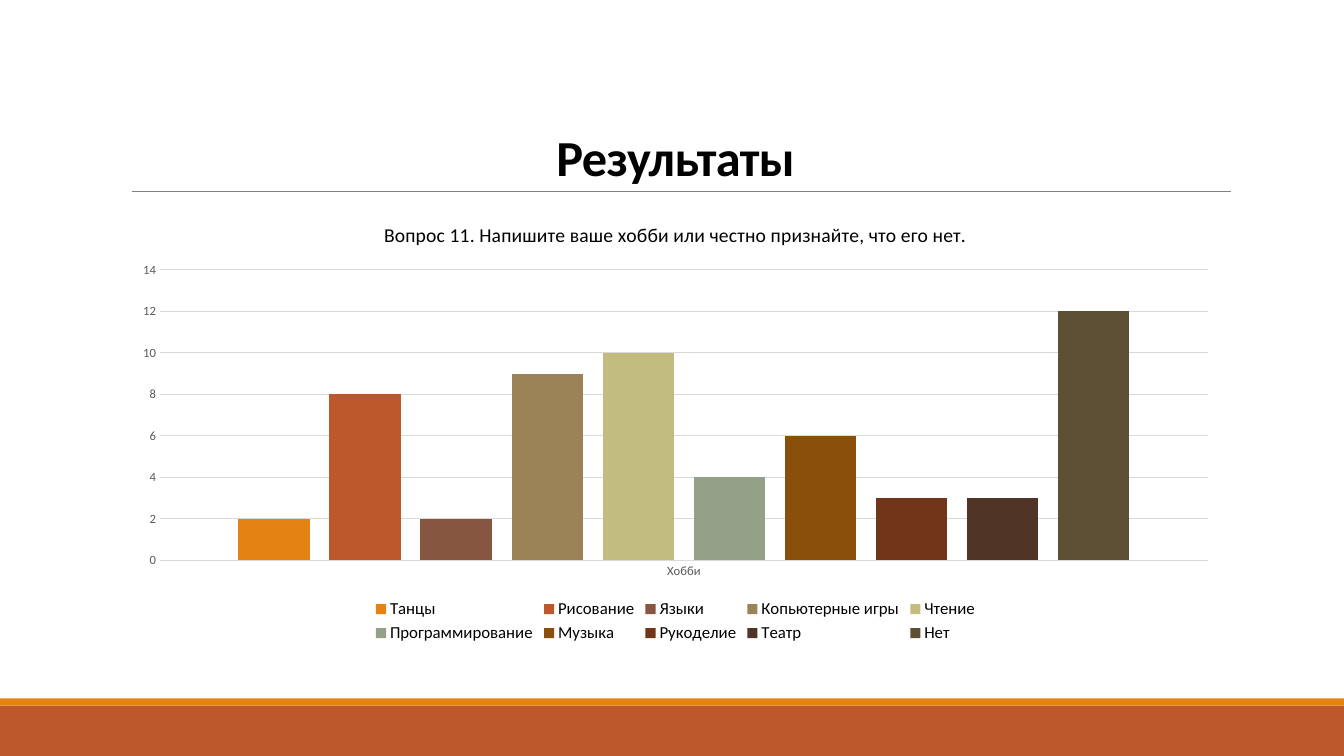
from dataclasses import dataclass

from lxml import etree
from pptx import Presentation
from pptx import util as u
from pptx.chart import data as cd
from pptx.dml.color import RGBColor
from pptx.enum import chart as ch, shapes, text
from pptx.oxml.ns import qn


@dataclass(frozen=True)
class Theme:
    font: str = "Calibri"
    ink: str = "000000"
    soft: str = "595959"
    grid: str = "D9D9D9"
    rule: str = "808080"
    band: str = "BD582C"
    strip: str = "E48312"
    head: float = 36
    ask: float = 14
    key: float = 12
    base: float = 10
    tick: float = 9


T = Theme()
WIDE, HIGH = 13.33, 7.5

HOBBIES = [
    ("Танцы", 2, "E48312"),
    ("Рисование", 8, "BD582C"),
    ("Языки", 2, "865640"),
    ("Копьютерные игры", 9, "9B8357"),
    ("Чтение", 10, "C2BC80"),
    ("Программирование", 4, "94A088"),
    ("Музыка", 6, "894F0B"),
    ("Рукоделие", 3, "71351A"),
    ("Театр", 3, "503426"),
    ("Нет", 12, "5D4F34"),
]


def inch(*nums):
    return [u.Inches(n) for n in nums]


def style(font, size, color, bold=False):
    font.name, font.size, font.bold = T.font, u.Pt(size), bold
    font.color.rgb = RGBColor.from_string(color)


def stroke(line, color, width):
    line.color.rgb = RGBColor.from_string(color)
    line.width = u.Pt(width)


def paint(fill, color):
    fill.solid()
    fill.fore_color.rgb = RGBColor.from_string(color)


def footer(slide, x, y, w, h):
    """Thin strip above a wide band."""
    thin = 0.07
    for top, tall, color in ((y + thin, h - thin, T.band), (y, thin, T.strip)):
        bar = slide.shapes.add_shape(shapes.MSO_SHAPE.RECTANGLE, *inch(x, top, w, tall))
        bar.shadow.inherit = False
        paint(bar.fill, color)
        bar.line.fill.background()


def header(slide, x, y, w, h):
    """Slide title with a rule along its foot."""
    rule = slide.shapes.add_connector(
        shapes.MSO_CONNECTOR.STRAIGHT, *inch(x + 0.11, y + h, x + w + 0.01, y + h))
    stroke(rule.line, T.rule, 0.5)
    etree.SubElement(rule._element.spPr, qn("a:effectLst"))

    frame = slide.shapes.add_textbox(*inch(x, y, w, h)).text_frame
    frame.word_wrap = True
    frame.vertical_anchor = text.MSO_ANCHOR.BOTTOM
    para = frame.paragraphs[0]
    para.alignment = text.PP_ALIGN.CENTER
    para.line_spacing = 0.85
    run = para.add_run()
    run.text = "Результаты"
    style(run.font, T.head, T.ink, bold=True)
    run.font._element.set("spc", "-50")


def survey(slide, x, y, w, h):
    """Column chart with one series per hobby."""
    data = cd.CategoryChartData()
    data.categories = ["Хобби"]
    for name, count, _ in HOBBIES:
        data.add_series(name, [count])
    chart = slide.shapes.add_chart(
        ch.XL_CHART_TYPE.COLUMN_CLUSTERED, *inch(x, y, w, h), data).chart
    style(chart.font, T.base, T.ink)

    # Question
    para = chart.chart_title.text_frame.paragraphs[0]
    run = para.add_run()
    run.text = "Вопрос 11. Напишите ваше хобби или честно признайте, что его нет."
    style(run.font, T.ask, T.ink)
    chart.chart_title.include_in_layout = False

    # Columns
    plot = chart.plots[0]
    plot.gap_width, plot.overlap = 219, -27
    plot.vary_by_categories = False
    for bars, (_, _, color) in zip(plot.series, HOBBIES):
        paint(bars.format.fill, color)
        bars.invert_if_negative = False

    # Axes
    for axis in (chart.category_axis, chart.value_axis):
        axis.major_tick_mark = axis.minor_tick_mark = ch.XL_TICK_MARK.NONE
        style(axis.tick_labels.font, T.tick, T.soft)
    stroke(chart.category_axis.format.line, T.grid, 0.75)
    chart.value_axis.format.line.fill.background()
    stroke(chart.value_axis.major_gridlines.format.line, T.grid, 0.75)

    # Legend
    chart.has_legend = True
    chart.legend.position = ch.XL_LEGEND_POSITION.BOTTOM
    chart.legend.include_in_layout = False
    style(chart.legend.font, T.key, T.ink)


def main():
    deck = Presentation()
    deck.slide_width, deck.slide_height = inch(WIDE, HIGH)
    slide = deck.slides.add_slide(deck.slide_layouts[6])
    footer(slide, 0, 6.93, WIDE, HIGH - 6.93)
    header(slide, 1.2, 0.31, 11, 1.59)
    survey(slide, 1.2, 2.02, 11, 4.4)
    deck.save("out.pptx")


if __name__ == "__main__":
    main()
